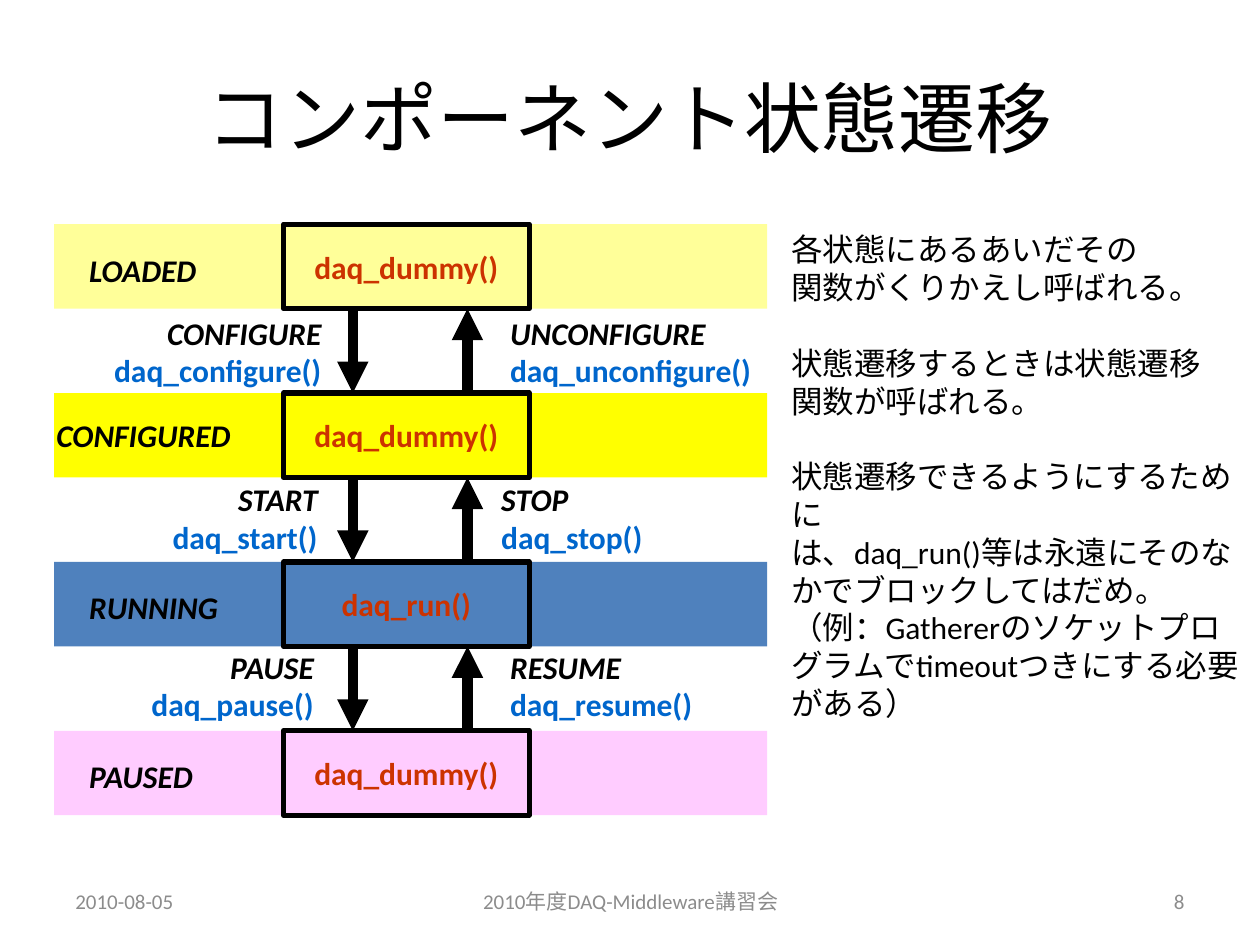
from pptx import Presentation
from pptx.dml.color import RGBColor
from pptx.enum.shapes import MSO_CONNECTOR as Conn, MSO_SHAPE as Kind
from pptx.enum.text import MSO_ANCHOR as Anchor, PP_ALIGN as Align
from pptx.oxml.ns import qn
from pptx.util import Inches, Pt
from lxml.etree import SubElement

HUES = {
    "black": "000000", "gray": "8C8C8C", "red": "CC3300", "blue": "0066CC",
    "loaded": "FFFF99", "ready": "FFFF00", "running": "4F81BD", "paused": "FFCCFF",
}
TOP, STEP, HIGH = 1.78, 1.34, 0.67

# name, band colour, repeated function, label left, label top
STATES = [
    ("LOADED", "loaded", "daq_dummy()", 0.61, 1.94),
    ("CONFIGURED", "ready", "daq_dummy()", 0.35, 3.25),
    ("RUNNING", "running", "daq_run()", 0.61, 4.62),
    ("PAUSED", "paused", "daq_dummy()", 0.61, 5.96),
]
# command, function, and the right edge (down) or left edge (up) of its label
DOWN = [("CONFIGURE", "daq_configure()", 2.65), ("START", "daq_start()", 2.62),
        ("PAUSE", "daq_pause()", 2.59)]
UP = [("UNCONFIGURE", "daq_unconfigure()", 3.95), ("STOP", "daq_stop()", 3.88),
      ("RESUME", "daq_resume()", 3.95)]
MOVE_TOPS = [2.44, 3.76, 5.09]
NOTES = [
    ["各状態にあるあいだその", "関数がくりかえし呼ばれる。"],
    ["状態遷移するときは状態遷移", "関数が呼ばれる。"],
    ["状態遷移できるようにするために",
     "は、daq_run()等は永遠にそのなかでブロックしてはだめ。",
     "（例：Gathererのソケットプログラムでtimeoutつきにする必要がある）"],
]


def rgb(hue):
    return RGBColor.from_string(HUES[hue])


def write(shape, *lines, size=18, hue="black", bold=False, italic=False,
          align=Align.LEFT, anchor=Anchor.TOP):
    """Fill a shape with lines; a line is text or (text, format changes)."""
    frame = shape.text_frame
    frame.word_wrap = True
    frame.vertical_anchor = anchor
    base = dict(size=size, hue=hue, bold=bold, italic=italic, gap=0)
    for i, line in enumerate(lines):
        words, diff = (line, {}) if isinstance(line, str) else line
        look = base | diff
        para = frame.paragraphs[0] if i == 0 else frame.add_paragraph()
        para.alignment = align
        para.space_before = Pt(look["gap"])
        run = para.add_run()
        run.text = words
        font = run.font
        font.name, font.size = "Calibri", Pt(look["size"])
        font.bold, font.italic = look["bold"], look["italic"]
        font.color.rgb = rgb(look["hue"])


def add_text(slide, box, *lines, **look):
    write(slide.shapes.add_textbox(*map(Inches, box)), *lines, **look)


def add_rect(slide, box, fill=None, line=None):
    rect = slide.shapes.add_shape(Kind.RECTANGLE, *map(Inches, box))
    rect.shadow.inherit = False
    if fill:
        rect.fill.solid()
        rect.fill.fore_color.rgb = rgb(fill)
    else:
        rect.fill.background()
    if line:
        rect.line.color.rgb = rgb(line)
        rect.line.width = Pt(3)
    else:
        rect.line.fill.background()
    return rect


def add_arrow(slide, x, start, end):
    arrow = slide.shapes.add_connector(
        Conn.STRAIGHT, *map(Inches, (x, start, x, end)))
    arrow.line.color.rgb = rgb("black")
    arrow.line.width = Pt(6)
    SubElement(arrow.line._get_or_add_ln(), qn("a:tailEnd"), type="triangle")
    SubElement(arrow._element.spPr, qn("a:effectLst"))


def add_states(slide):
    tops = [TOP + STEP * i for i in range(len(STATES))]
    for top, state in zip(tops, STATES):
        add_rect(slide, (0.43, top, 5.66, HIGH), fill=state[1])
    for top, (name, _, func, x, y) in zip(tops, STATES):
        add_text(slide, (x, y, 1.93, 0.41), name, bold=True, italic=True)
        box = add_rect(slide, (2.25, top, 1.95, HIGH), line="black")
        write(box, func, hue="red", bold=True, align=Align.CENTER,
              anchor=Anchor.MIDDLE)


def add_move(slide, left, top, name, func, align):
    add_text(slide, (left, top, 2.46, 0.72), name,
             (func, dict(hue="blue", italic=False)),
             bold=True, italic=True, align=align)


def add_moves(slide):
    for i, (top, down, up) in enumerate(zip(MOVE_TOPS, DOWN, UP)):
        add_move(slide, down[2] - 2.46, top, *down[:2], Align.RIGHT)
        add_move(slide, up[2], top, *up[:2], Align.LEFT)
        low = TOP + STEP * (i + 1)
        high = low - STEP + HIGH
        add_arrow(slide, 2.8, high, low)
        add_arrow(slide, 3.71, low, high)


def add_notes(slide):
    lines = [(words, dict(gap=21.6 if i and not j else 0))
             for i, block in enumerate(NOTES) for j, words in enumerate(block)]
    add_text(slide, (6.18, TOP, 3.82, 3.43), *lines)


def add_footer(slide):
    for left, width, words, align in [
        (0.5, 2.33, "2010-08-05", Align.LEFT),
        (3.42, 3.17, "2010年度DAQ-Middleware講習会", Align.CENTER),
        (7.17, 2.33, "8", Align.RIGHT),
    ]:
        add_text(slide, (left, 6.95, width, 0.4), words, size=12, hue="gray",
                 align=align, anchor=Anchor.MIDDLE)


def main():
    deck = Presentation()
    deck.slide_width, deck.slide_height = Inches(10), Inches(7.5)
    slide = deck.slides.add_slide(deck.slide_layouts[6])
    add_text(slide, (0.5, 0.3, 9, 1.25), "コンポーネント状態遷移", size=44,
             align=Align.CENTER, anchor=Anchor.MIDDLE)
    add_footer(slide)
    add_states(slide)
    add_moves(slide)
    add_notes(slide)
    deck.save("out.pptx")


if __name__ == "__main__":
    main()
